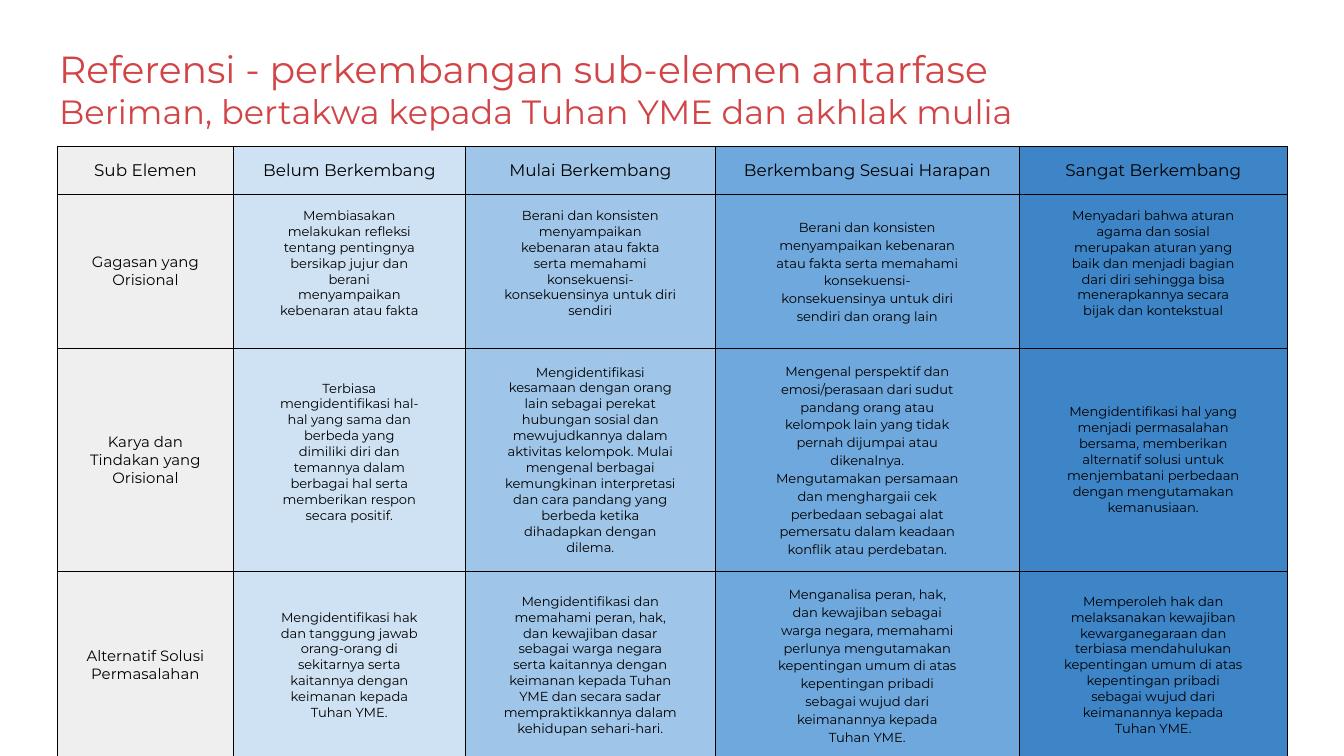
from pptx import Presentation
from pptx.dml.color import RGBColor
from pptx.enum.text import MSO_ANCHOR, MSO_AUTO_SIZE, PP_ALIGN
from pptx.oxml.ns import qn
from pptx.util import Pt
from lxml.etree import SubElement

HEADERS = ["Sub Elemen", "Belum Berkembang", "Mulai Berkembang",
           "Berkembang Sesuai Harapan", "Sangat Berkembang"]
STAGE_FILLS = ["EFEFEF", "CFE2F3", "9FC5E8", "6FA8DC", "3D85C6"]
COLUMN_WIDTHS = [94.1, 124.3, 133.9, 162.9, 143.5]
ROW_HEIGHTS = [25.5, 82.5, 119.5, 100]

# Each | starts a new paragraph
SUB_ELEMENTS = [
    ["Gagasan yang Orisional",
     "Membiasakan|melakukan refleksi|tentang pentingnya|bersikap jujur dan|"
     "berani|menyampaikan|kebenaran atau fakta",
     "Berani dan konsisten|menyampaikan|kebenaran atau fakta|serta memahami|"
     "konsekuensi-|konsekuensinya untuk diri|sendiri",
     "Berani dan konsisten|menyampaikan kebenaran|atau fakta serta memahami|"
     "konsekuensi-|konsekuensinya untuk diri|sendiri dan orang lain",
     "Menyadari bahwa aturan|agama dan sosial|merupakan aturan yang|"
     "baik dan menjadi bagian|dari diri sehingga bisa|menerapkannya secara|"
     "bijak dan kontekstual"],
    ["Karya dan Tindakan yang Orisional",
     "Terbiasa|mengidentifikasi hal-|hal yang sama dan|berbeda yang|"
     "dimiliki diri dan|temannya dalam|berbagai hal serta|"
     "memberikan respon|secara positif.",
     "Mengidentifikasi|kesamaan dengan orang|lain sebagai perekat|"
     "hubungan sosial dan|mewujudkannya dalam|aktivitas kelompok. Mulai|"
     "mengenal berbagai|kemungkinan interpretasi|dan cara pandang yang|"
     "berbeda ketika|dihadapkan dengan|dilema.",
     "Mengenal perspektif dan|emosi/perasaan dari sudut|pandang orang atau|"
     "kelompok lain yang tidak|pernah dijumpai atau|dikenalnya.|"
     "Mengutamakan persamaan|dan menghargaii cek|perbedaan sebagai alat|"
     "pemersatu dalam keadaan|konflik atau perdebatan.",
     "Mengidentifikasi hal yang|menjadi permasalahan|bersama, memberikan|"
     "alternatif solusi untuk|menjembatani perbedaan|dengan mengutamakan|"
     "kemanusiaan."],
    ["Alternatif Solusi Permasalahan",
     "Mengidentifikasi hak|dan tanggung jawab|orang-orang di|"
     "sekitarnya serta|kaitannya dengan|keimanan kepada|Tuhan YME.",
     "Mengidentifikasi dan|memahami peran, hak,|dan kewajiban dasar|"
     "sebagai warga negara|serta kaitannya dengan|keimanan kepada Tuhan|"
     "YME dan secara sadar|mempraktikkannya dalam|kehidupan sehari-hari.",
     "Menganalisa peran, hak,|dan kewajiban sebagai|warga negara, memahami|"
     "perlunya mengutamakan|kepentingan umum di atas|kepentingan pribadi|"
     "sebagai wujud dari|keimanannya kepada|Tuhan YME.",
     "Memperoleh hak dan|melaksanakan kewajiban|kewarganegaraan dan|"
     "terbiasa mendahulukan|kepentingan umum di atas|kepentingan pribadi|"
     "sebagai wujud dari|keimanannya kepada|Tuhan YME."],
]
RAISED_CELLS = {(1, 1), (1, 2), (1, 4), (2, 1)}  # text sits above the middle
HARAPAN_COLUMN = 3  # has looser lines


def color(value):
    return RGBColor.from_string(value)


class PhaseSlide:
    font_name = "Montserrat"
    title_color = "D24547"
    text_color = "000000"
    inset = 7.2

    def __init__(self, presentation):
        self.slide = presentation.slides.add_slide(presentation.slide_layouts[5])

    def format_paragraph(self, paragraph, size, ink, align, spacing=1.0):
        paragraph.alignment = align
        paragraph.line_spacing = spacing
        for run in paragraph.runs:
            run.font.name = self.font_name
            run.font.size = Pt(size)
            run.font.bold = False
            run.font.color.rgb = color(ink)

    def set_insets(self, holder, extra_bottom=0):
        holder.margin_left = holder.margin_right = holder.margin_top = Pt(self.inset)
        holder.margin_bottom = Pt(self.inset + extra_bottom)

    def title(self, lines, sizes, left, top, width, height):
        title = self.slide.shapes.title
        title.left, title.top = Pt(left), Pt(top)
        title.width, title.height = Pt(width), Pt(height)
        frame = title.text_frame
        frame.text = "\n".join(lines)
        frame.word_wrap = True
        frame.auto_size = MSO_AUTO_SIZE.NONE
        frame.vertical_anchor = MSO_ANCHOR.TOP
        self.set_insets(frame)
        for paragraph, size in zip(frame.paragraphs, sizes):
            self.format_paragraph(paragraph, size, self.title_color, PP_ALIGN.LEFT)

    def table(self, left, top, widths, heights):
        table = self.slide.shapes.add_table(
            len(heights), len(widths), Pt(left), Pt(top),
            Pt(sum(widths)), Pt(sum(heights))).table
        table.first_row = table.horz_banding = False
        for column, width in zip(table.columns, widths):
            column.width = Pt(width)
        for row, height in zip(table.rows, heights):
            row.height = Pt(height)
        return table

    def cell(self, cell, text, size, fill, spacing=1.0, extra_bottom=0):
        cell.text_frame.text = text.replace("|", "\n")
        cell.vertical_anchor = MSO_ANCHOR.MIDDLE
        self.set_insets(cell, extra_bottom)
        for paragraph in cell.text_frame.paragraphs:
            self.format_paragraph(paragraph, size, self.text_color,
                                  PP_ALIGN.CENTER, spacing)
        self.borders(cell)
        cell.fill.solid()
        cell.fill.fore_color.rgb = color(fill)

    def borders(self, cell):
        properties = cell._tc.get_or_add_tcPr()
        for side in ("a:lnL", "a:lnR", "a:lnT", "a:lnB"):
            line = SubElement(properties, qn(side), w=str(Pt(0.75)))
            solid = SubElement(line, qn("a:solidFill"))
            SubElement(solid, qn("a:srgbClr"), val=self.text_color)


def main():
    presentation = Presentation()
    presentation.slide_width, presentation.slide_height = Pt(720), Pt(405)
    page = PhaseSlide(presentation)

    # Title and subtitle
    page.title(["Referensi - perkembangan sub-elemen antarfase",
                "Beriman, bertakwa kepada Tuhan YME dan akhlak mulia"],
               [20.2, 18], 24.5, 17.3, 671, 61.2)

    # Development table
    development = page.table(30.9, 78.6, COLUMN_WIDTHS, ROW_HEIGHTS)
    for row, texts in enumerate([HEADERS] + SUB_ELEMENTS):
        for column, text in enumerate(texts):
            size = 9 if row == 0 else 8 if column == 0 else 7
            loose = row > 0 and column == HARAPAN_COLUMN
            page.cell(development.cell(row, column), text, size,
                      STAGE_FILLS[column], 1.12 if loose else 1.0,
                      8.5 if (row, column) in RAISED_CELLS else 0)

    presentation.save("out.pptx")


if __name__ == "__main__":
    main()
